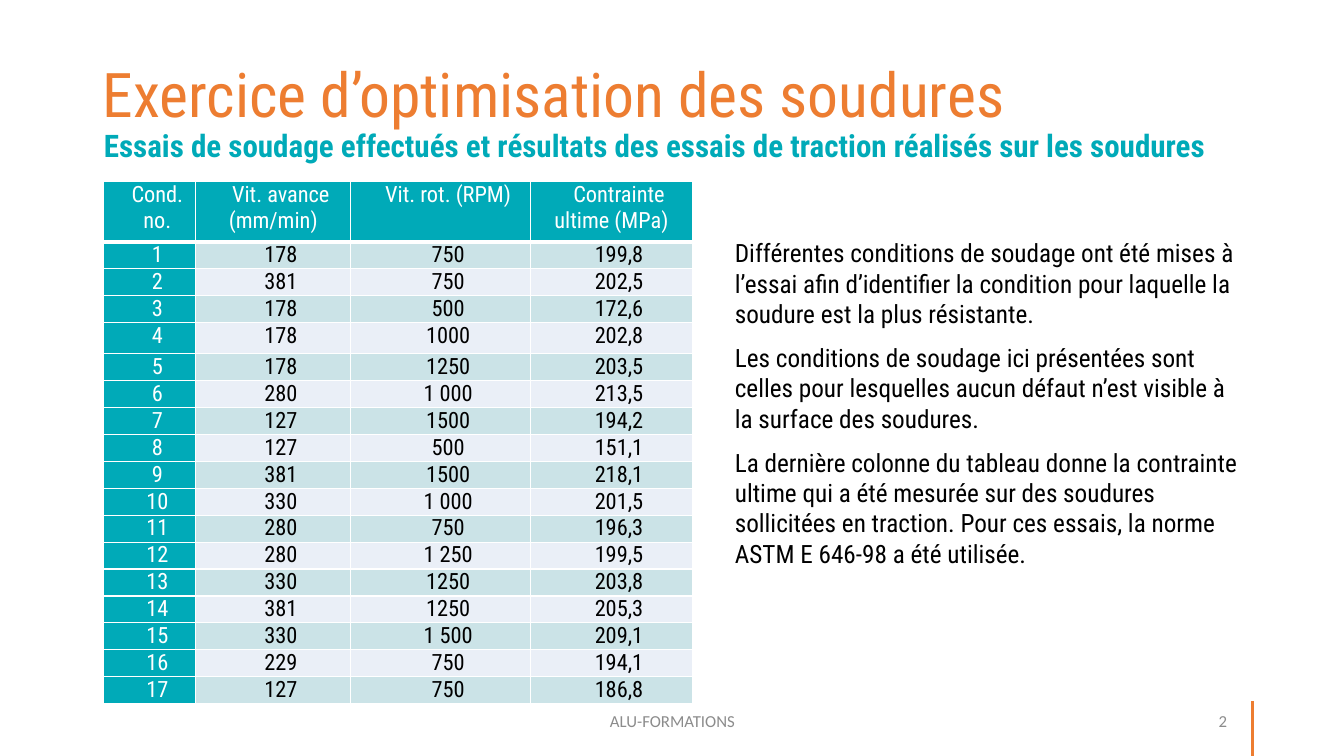
from pptx import Presentation
from pptx.dml.color import RGBColor
from pptx.enum.shapes import MSO_CONNECTOR
from pptx.enum.text import MSO_ANCHOR, PP_ALIGN
from pptx.oxml.ns import qn
from pptx.util import Inches, Pt
from lxml.etree import SubElement

ORANGE = RGBColor(0xED, 0x7D, 0x31)
TEAL = RGBColor(0x00, 0xAA, 0xB8)
PALE_TEAL = RGBColor(0xCB, 0xE3, 0xE7)
PALE_BLUE = RGBColor(0xEA, 0xEF, 0xF7)
GREY = RGBColor(0x8C, 0x8C, 0x8C)
BLACK = RGBColor(0x00, 0x00, 0x00)
WHITE = RGBColor(0xFF, 0xFF, 0xFF)

HEADERS = ["Cond.\nno.", "Vit. avance (mm/min)", "Vit. rot. (RPM)", "Contrainte ultime (MPa)"]
# Feed speed, rotation speed, ultimate stress
TRIALS = [
    ("178", "750", "199,8"), ("381", "750", "202,5"), ("178", "500", "172,6"),
    ("178", "1000", "202,8"), ("178", "1250", "203,5"), ("280", "1 000", "213,5"),
    ("127", "1500", "194,2"), ("127", "500", "151,1"), ("381", "1500", "218,1"),
    ("330", "1 000", "201,5"), ("280", "750", "196,3"), ("280", "1 250", "199,5"),
    ("330", "1250", "203,8"), ("381", "1250", "205,3"), ("330", "1 500", "209,1"),
    ("229", "750", "194,1"), ("127", "750", "186,8"),
]
COLUMN_WIDTHS = [6.83, 11.55, 13.35, 12.08]
ROW_HEIGHTS = [8] + [3.45] * len(TRIALS)
ROW_HEIGHTS[4] = 4.13
EXPLANATION = """Différentes conditions de soudage ont été mises à l’essai afin d’identifier la condition pour laquelle la soudure est la plus résistante.
Les conditions de soudage ici présentées sont celles pour lesquelles aucun défaut n’est visible à la surface des soudures.
La dernière colonne du tableau donne la contrainte ultime qui a été mesurée sur des soudures sollicitées en traction. Pour ces essais, la norme ASTM E 646-98 a été utilisée."""


def write(frame, text, size=18, color=BLACK, font="Roboto Condensed", bold=False,
          align=PP_ALIGN.LEFT, spacing=None, gap=0, indent=0):
    """Fill a text frame, one paragraph per line of text."""
    for index, line in enumerate(text.split("\n")):
        para = frame.add_paragraph() if index else frame.paragraphs[0]
        para.alignment = align
        para.line_spacing = spacing
        if index:
            para.space_before = Pt(gap)
        if indent:
            properties = para._p.get_or_add_pPr()
            properties.set("marL", "0")
            properties.set("indent", str(Inches(indent)))
        span = para.add_run()
        span.text = line
        span.font.name = font
        span.font.size = Pt(size)
        span.font.bold = bold
        span.font.color.rgb = color


class WeldingSlide:
    """Slide whose lengths are percentages of its width and height."""

    def __init__(self, deck):
        self.width, self.height = deck.slide_width, deck.slide_height
        self.shapes = deck.slides.add_slide(deck.slide_layouts[6]).shapes

    def across(self, share):
        return round(self.width * share / 100)

    def down(self, share):
        return round(self.height * share / 100)

    def place(self, left, top, width, height):
        return self.across(left), self.down(top), self.across(width), self.down(height)

    def text(self, area, text, anchor=MSO_ANCHOR.TOP, inset=True, **style):
        frame = self.shapes.add_textbox(*self.place(*area)).text_frame
        frame.word_wrap = True
        frame.vertical_anchor = anchor
        if not inset:
            frame.margin_left = frame.margin_right = frame.margin_top = frame.margin_bottom = 0
        write(frame, text, **style)

    def line(self, left, top, right, bottom, color, weight):
        line = self.shapes.add_connector(
            MSO_CONNECTOR.STRAIGHT, self.across(left), self.down(top),
            self.across(right), self.down(bottom))
        line.line.color.rgb = color
        line.line.width = Pt(weight)
        SubElement(line._element.spPr, qn("a:effectLst"))

    def cell(self, cell, text, fill, color, bottom_border):
        properties = cell._tc.get_or_add_tcPr()
        for side, weight in (("L", 1), ("R", 1), ("T", 1), ("B", bottom_border)):
            border = SubElement(properties, qn("a:ln" + side), w=str(Pt(weight)))
            paint = SubElement(border, qn("a:solidFill"))
            SubElement(paint, qn("a:srgbClr"), val=str(WHITE))
        cell.fill.solid()
        cell.fill.fore_color.rgb = fill
        cell.margin_left = cell.margin_right = Inches(0.07)
        cell.margin_top = cell.margin_bottom = 0
        write(cell.text_frame, text, size=16, color=color, align=PP_ALIGN.CENTER, indent=0.15)

    def table(self, left, top, widths, heights, rows):
        area = self.place(left, top, sum(widths), sum(heights))
        table = self.shapes.add_table(len(heights), len(widths), *area).table
        table.first_row = table.horz_banding = False
        for column, width in zip(table.columns, widths):
            column.width = self.across(width)
        for row, height in zip(table.rows, heights):
            row.height = self.down(height)
        for r, values in enumerate(rows):
            band = PALE_TEAL if r % 2 else PALE_BLUE
            for c, value in enumerate(values):
                heading = r == 0 or c == 0
                self.cell(table.cell(r, c), value, TEAL if heading else band,
                          WHITE if heading else BLACK, 1 if r else 3)


def main():
    deck = Presentation()
    deck.slide_width, deck.slide_height = Inches(13.33), Inches(7.5)
    slide = WeldingSlide(deck)

    # Footer
    slide.line(93.17, 100, 93.17, 92.67, ORANGE, 2.25)
    footer = dict(anchor=MSO_ANCHOR.MIDDLE, size=12, font="Calibri", color=GREY)
    slide.text((33.16, 92.67, 33.76, 5.33), "ALU-FORMATIONS", align=PP_ALIGN.CENTER, **footer)
    slide.text((82.15, 92.67, 9.9, 5.33), "2", align=PP_ALIGN.RIGHT, **footer)

    # Title and subtitle
    slide.text((6.9, 6.13, 80.57, 13.47), "Exercice d’optimisation des soudures",
               anchor=MSO_ANCHOR.MIDDLE, size=44, color=ORANGE, spacing=0.9)
    slide.text((7.73, 17.33, 86.12, 6.27),
               "Essais de soudage effectués et résultats des essais de traction réalisés sur les soudures",
               inset=False, size=22.2, color=TEAL, bold=True, spacing=0.9)

    # Trial results
    numbered = [(str(number), *trial) for number, trial in enumerate(TRIALS, 1)]
    slide.table(7.73, 24, COLUMN_WIDTHS, ROW_HEIGHTS, [HEADERS] + numbered)

    # Explanation
    slide.text((53.94, 30.8, 39.68, 58.93), EXPLANATION, gap=10)

    deck.save("out.pptx")


if __name__ == "__main__":
    main()
